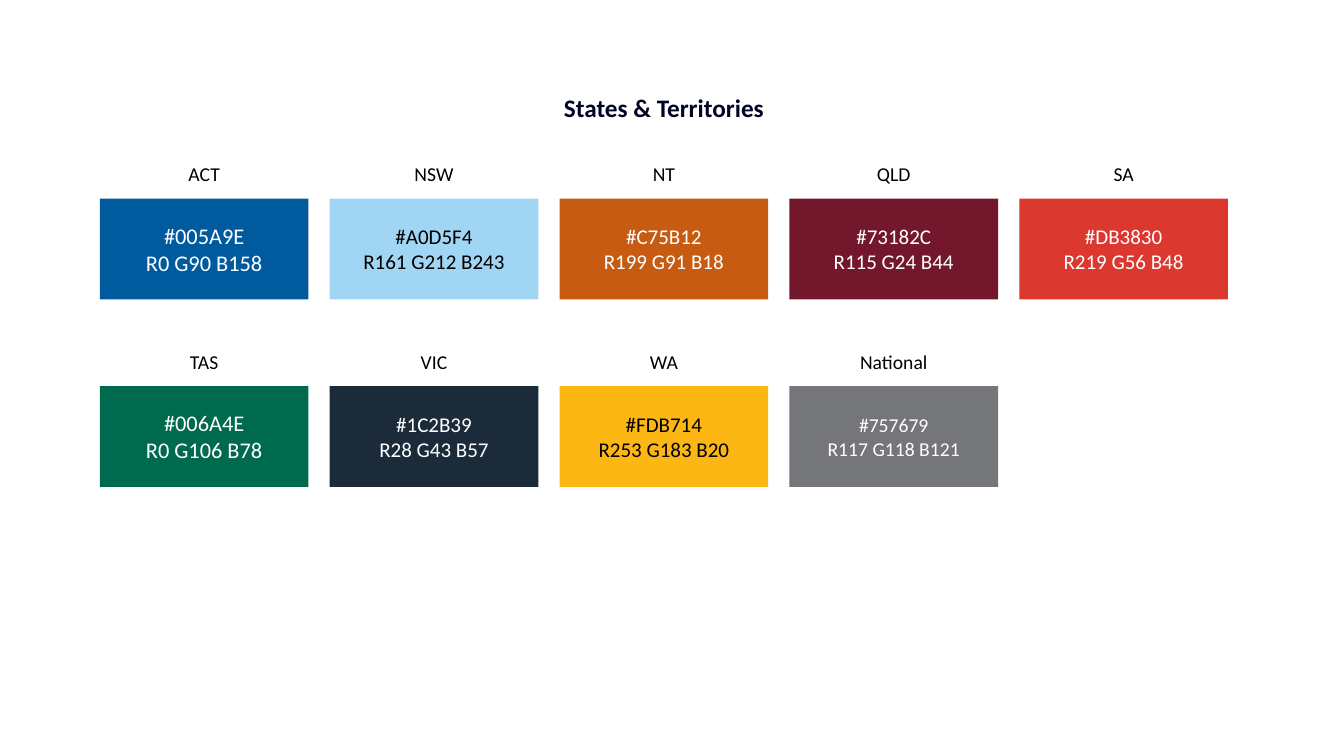
from dataclasses import dataclass

from pptx import Presentation
from pptx.dml.color import RGBColor
from pptx.enum.shapes import MSO_SHAPE
from pptx.enum.text import MSO_ANCHOR, PP_ALIGN
from pptx.util import Inches, Pt

RECT = MSO_SHAPE.RECTANGLE
CENTER = PP_ALIGN.CENTER
TOP, MIDDLE = MSO_ANCHOR.TOP, MSO_ANCHOR.MIDDLE

TITLE = "States & Territories"
# Rows of swatches: region, hex code, RGB label, text colour, text size
SWATCH_ROWS = [
    [
        ("ACT", "005A9E", "R0 G90 B158", "light", 16),
        ("NSW", "A0D5F4", "R161 G212 B243", "dark", 15),
        ("NT", "C75B12", "R199 G91 B18", "light", 15),
        ("QLD", "73182C", "R115 G24 B44", "light", 15),
        ("SA", "DB3830", "R219 G56 B48", "light", 15),
    ],
    [
        ("TAS", "006A4E", "R0 G106 B78", "light", 16),
        ("VIC", "1C2B39", "R28 G43 B57", "light", 15),
        ("WA", "FDB714", "R253 G183 B20", "dark", 15),
        ("National", "757679", "R117 G118 B121", "light", 14),
    ],
]


@dataclass(frozen=True)
class Theme:
    font: str = "Calibri"
    title: str = "000425"
    light: str = "FFFFFF"
    dark: str = "000000"
    title_size: int = 18
    label_size: int = 14


THEME = Theme()

SLIDE_W, SLIDE_H = 13.33, 7.5
GRID_LEFT, GRID_W = 0.99, 11.19
TITLE_TOP, TITLE_H = 0.87, 0.4
LABEL_TOP, LABEL_H = 1.56, 0.34
SWATCH_W, SWATCH_H = 2.07, 1
SWATCH_DROP = 0.41
COLUMN_STEP = (GRID_W - SWATCH_W) / 4
ROW_STEP = 1.86


def write(sp, lines, color, size, bold=False, anchor=TOP):
    tf = sp.text_frame
    tf.word_wrap = True
    tf.vertical_anchor = anchor
    tf.text = "\n".join(lines)
    for p in tf.paragraphs:
        p.alignment = CENTER
        font = p.runs[0].font
        font.name, font.size, font.bold = THEME.font, Pt(size), bold
        font.color.rgb = RGBColor.from_string(color)


def add_label(slide, text, x, y, w, h, **style):
    sp = slide.shapes.add_textbox(Inches(x), Inches(y), Inches(w), Inches(h))
    write(sp, [text], **style)


def add_swatch(slide, code, rgb, x, y, **style):
    sp = slide.shapes.add_shape(
        RECT, Inches(x), Inches(y), Inches(SWATCH_W), Inches(SWATCH_H))
    sp.shadow.inherit = False
    sp.fill.solid()
    sp.fill.fore_color.rgb = RGBColor.from_string(code)
    sp.line.fill.background()
    write(sp, ["#" + code, rgb], anchor=MIDDLE, **style)


def main():
    prs = Presentation()
    prs.slide_width, prs.slide_height = Inches(SLIDE_W), Inches(SLIDE_H)
    slide = prs.slides.add_slide(prs.slide_layouts[6])

    add_label(slide, TITLE, GRID_LEFT, TITLE_TOP, GRID_W, TITLE_H,
              color=THEME.title, size=THEME.title_size, bold=True)
    for row, swatches in enumerate(SWATCH_ROWS):
        y = LABEL_TOP + row * ROW_STEP
        for column, (region, code, rgb, tone, size) in enumerate(swatches):
            x = GRID_LEFT + column * COLUMN_STEP
            add_label(slide, region, x, y, SWATCH_W, LABEL_H,
                      color=THEME.dark, size=THEME.label_size)
            add_swatch(slide, code, rgb, x, y + SWATCH_DROP,
                       color=getattr(THEME, tone), size=size)

    prs.save("out.pptx")


if __name__ == "__main__":
    main()
